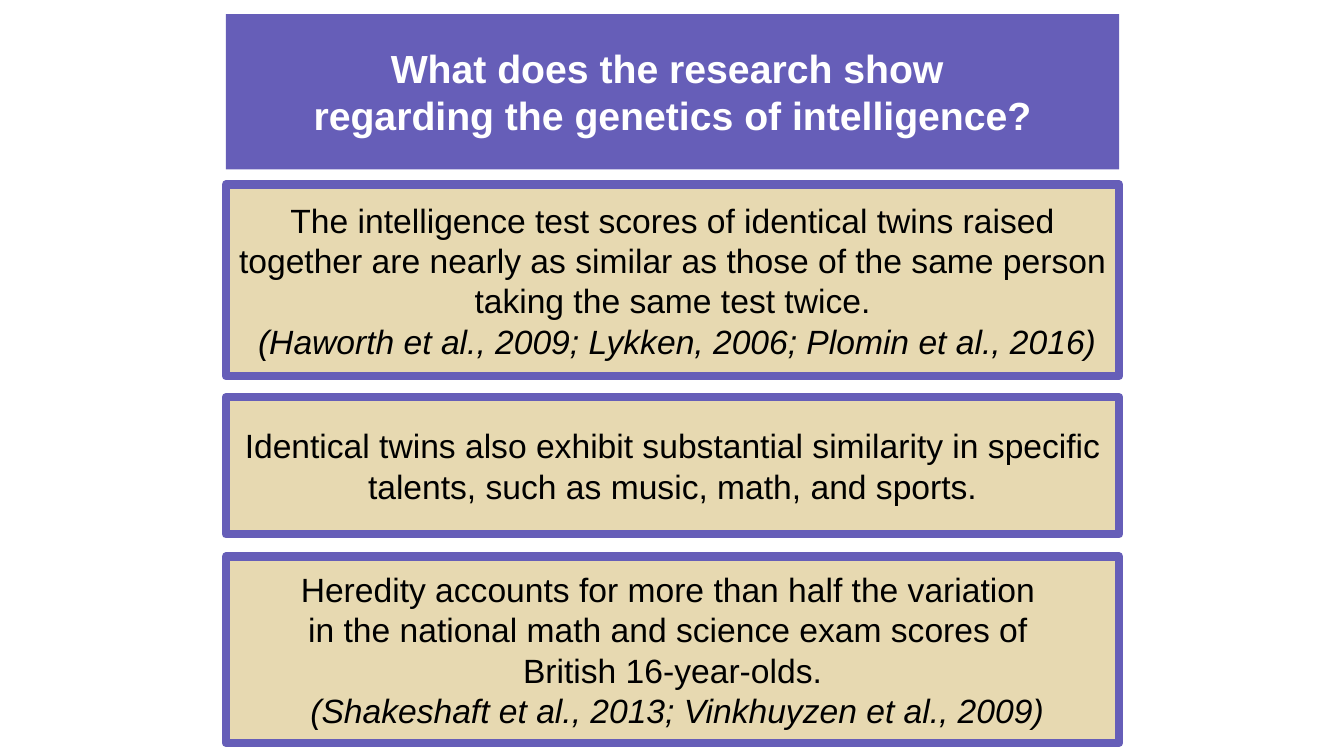
import pptx
import pptx.dml.color
import pptx.enum.text
import pptx.oxml
import pptx.oxml.ns
import pptx.util

COLORS = {"purple": "665EB8", "sand": "E7D9B1", "white": "FFFFFF", "black": "000000"}
COLUMNS, ROWS = 133.3, 75
LEFT, WIDTH = 22.4, 88.6
FINDINGS = [
    (18.3, 19, [
        "The intelligence test scores of identical twins raised together are nearly "
        "as similar as those of the same person taking the same test twice.",
    ], " (Haworth et al., 2009; Lykken, 2006; Plomin et al., 2016)"),
    (39.4, 13.6, [
        "Identical twins also exhibit substantial similarity in specific talents, "
        "such as music, math, and sports.",
    ], None),
    (55.2, 18.5, [
        "Heredity accounts for more than half the variation ",
        "in the national math and science exam scores of ",
        "British 16-year-olds.",
    ], " (Shakeshaft et al., 2013; Vinkhuyzen et al., 2009)"),
]


def rgb(name):
    return pptx.dml.color.RGBColor.from_string(COLORS[name])


class ResearchSlide:
    """Holds the style and the current slide, and fills its placeholders."""

    def __init__(self, deck):
        self.cell_width = deck.slide_width / COLUMNS
        self.cell_height = deck.slide_height / ROWS
        self.font_name = "Arial"
        self.border = pptx.util.Pt(6)
        self.slide = deck.slides.add_slide(deck.slide_layouts[4])

    def place(self, panel, top, height, fill):
        panel.left, panel.width = (round(n * self.cell_width) for n in (LEFT, WIDTH))
        panel.top, panel.height = (round(n * self.cell_height) for n in (top, height))
        panel.fill.solid()
        panel.fill.fore_color.rgb = rgb(fill)
        frame = panel.text_frame
        frame.word_wrap = True
        frame.auto_size = pptx.enum.text.MSO_AUTO_SIZE.NONE
        frame.vertical_anchor = pptx.enum.text.MSO_ANCHOR.MIDDLE
        return frame

    def format(self, paragraph, size, color, bold=False, italic=False):
        properties = paragraph._p.get_or_add_pPr()
        properties.set("marL", "0")
        properties.set("indent", "0")
        properties.append(pptx.oxml.parse_xml(
            f"<a:buNone {pptx.oxml.ns.nsdecls('a')}/>"))
        paragraph.alignment = pptx.enum.text.PP_ALIGN.CENTER
        paragraph.line_spacing = pptx.util.Pt(size * 1.2)
        paragraph.space_before = paragraph.space_after = pptx.util.Pt(0)
        font = paragraph.font
        font.name, font.size = self.font_name, pptx.util.Pt(size)
        font.bold, font.italic = bold, italic
        font.color.rgb = rgb(color)

    def question(self, text, top, height):
        heading = self.place(self.slide.shapes.title, top, height, "purple")
        heading.text = text
        self.format(heading.paragraphs[0], 28, "white", bold=True)

    def finding(self, panel, top, height, statements, citation):
        body = self.place(panel, top, height, "sand")
        panel.line.color.rgb = rgb("purple")
        panel.line.width = self.border
        panel.line._get_or_add_ln().append(pptx.oxml.parse_xml(
            f"<a:round {pptx.oxml.ns.nsdecls('a')}/>"))
        body.text = "\n".join(statements + ([citation] if citation else []))
        for paragraph in body.paragraphs:
            self.format(paragraph, 24, "black", italic=paragraph.text == citation)

    def findings(self, entries):
        panels = [p for p in self.slide.placeholders if p.placeholder_format.idx in range(1, 5)]
        for panel, entry in zip(panels, entries):
            self.finding(panel, *entry)
        for unused in panels[len(entries):]:
            unused._element.getparent().remove(unused._element)


def main():
    deck = pptx.Presentation()
    deck.slide_width = pptx.util.Inches(13.33)
    deck.slide_height = pptx.util.Inches(7.5)
    research = ResearchSlide(deck)
    research.question(
        "What does the research show \vregarding the genetics of intelligence?", 1.4, 15.4)
    research.findings(FINDINGS)
    deck.save("out.pptx")


if __name__ == "__main__":
    main()
